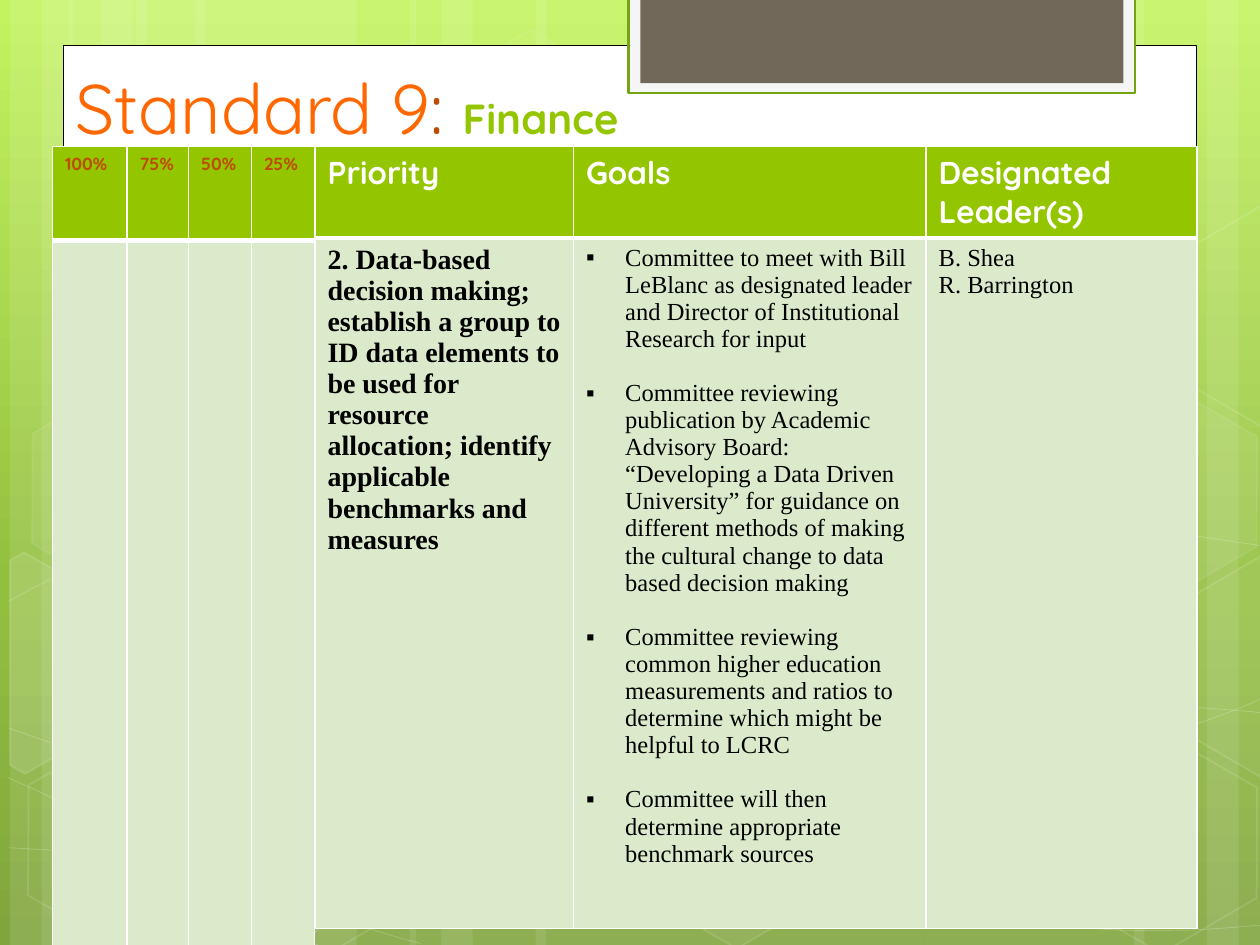
"""Build the Standard 9 finance slide with its priorities and progress tables."""
from copy import deepcopy
from math import cos, radians, sin
from typing import NamedTuple, Optional

from lxml import etree
from pptx import Presentation
from pptx.dml.color import RGBColor
from pptx.enum.shapes import MSO_SHAPE
from pptx.enum.text import MSO_ANCHOR, MSO_AUTO_SIZE, PP_ALIGN
from pptx.oxml.ns import qn
from pptx.util import Cm, Pt

RECT, HEXAGON = MSO_SHAPE.RECTANGLE, MSO_SHAPE.HEXAGON
BOTTOM, LEFT, NO_FIT = MSO_ANCHOR.BOTTOM, PP_ALIGN.LEFT, MSO_AUTO_SIZE.NONE
WHITE, BLACK, GREEN, PALE, RUST = "FFFFFF", "000000", "94C600", "DCEACC", "BF4D00"
SANS, SERIF = "Quicksand", "Times New Roman"
SLIDE_W, SLIDE_H, TILT = 25.4, 19.05, 30


class Paint(NamedTuple):
    fill: Optional[str] = None
    fill_alpha: int = 100
    line: Optional[str] = None
    width: float = 1
    line_alpha: int = 100


class Box(NamedTuple):
    x: float
    y: float
    w: float
    h: float
    paint: Paint


class Hexagon(NamedTuple):
    x: float
    y: float
    fill_alpha: int
    line_alpha: int


class CutHexagon(NamedTuple):
    center: tuple
    fill_alpha: int
    points: tuple


class Style(NamedTuple):
    font: str
    size: float
    color: str
    bold: bool = False


class Entry(NamedTuple):
    lines: tuple
    style: Style
    bullets: bool = False


class Grid(NamedTuple):
    x: float
    y: float
    cols: tuple
    rows: tuple
    cells: tuple


HEAD = Style(SANS, 18, WHITE, True)
SCORE = Style(SANS, 10, RUST, True)
PRIORITY = Style(SERIF, 16, BLACK, True)
BODY = Style(SERIF, 14, BLACK)
EMPTY = Entry((), BODY)

STRIPE = Paint(WHITE, 10)
STRIPE_SETS = ((0.2, 4.45), (1.4, 4.45), (8.26, 7.82))
RIGHT_STRIPES = ((18.62, 4.45), (24.33, 1.27), (22.86, 2.11))
CURVE = Paint(line=WHITE, width=0.5, line_alpha=20)
CURVES = (
    ((0.18, 17.09), (1.55, 17.17), (2.92, 17.25), (4.83, 17.22), (6.73, 17.2),
     (9.09, 17.15), (11.63, 16.89), (14.17, 16.64), (17.78, 16.15), (20.12, 15.67),
     (22.43, 15.19), (24.82, 14.43), (25.58, 14)),
    ((0.18, 12.12), (0.91, 11.71), (1.65, 11.33), (3.07, 10.95), (4.52, 10.57),
     (6.58, 10.01), (8.81, 9.83), (11.07, 9.65), (13.82, 9.63), (16.61, 9.83),
     (19.41, 10.03), (24.05, 10.82), (25.58, 11.02)),
    ((0.15, 15.67), (3.23, 17.07), (6.27, 18.47), (8.48, 19.02)),
    ((0.18, 14.68), (0.97, 14.96), (1.78, 15.24), (3.25, 15.65), (4.72, 16.03),
     (6.93, 16.66), (9.07, 17.09), (11.18, 17.53), (13.84, 17.98), (15.95, 18.24),
     (18.06, 18.52), (20.32, 18.62), (21.67, 18.69), (22.99, 18.8), (23.34, 18.75),
     (24, 18.75), (24.66, 18.72), (25.12, 18.67), (25.58, 18.64)),
    ((6.15, 19.02), (6.6, 18.52), (7.06, 18.01), (7.67, 17.55), (8.28, 17.09),
     (9.14, 16.59), (9.86, 16.23), (10.57, 15.88), (11, 15.72), (11.94, 15.47),
     (12.85, 15.21), (14.55, 14.86), (15.44, 14.68), (16.36, 14.5), (16.48, 14.5),
     (17.27, 14.45), (18.06, 14.38), (19.3, 14.3), (20.17, 14.27), (21.06, 14.25),
     (22.5, 14.27), (22.5, 14.27), (23, 14.27), (23.7, 14.27), (24.21, 14.27),
     (24.66, 14.3), (25.1, 14.33), (25.55, 14.38)),
)
HEXAGONS = (
    Hexagon(8.48, 0.91, 4, 8), Hexagon(12.62, 14.96, 6, 12), Hexagon(0.28, 15.01, 0, 12),
    Hexagon(0.36, 7.92, 7, 8), Hexagon(4.42, 15.04, 0, 12), Hexagon(19.13, 11.51, 10, 12),
    Hexagon(21.18, 15.06, 0, 12), Hexagon(21.18, 7.98, 7, 8),
)
CUT_HEXAGONS = (
    CutHexagon((0.91, 13.59), 10, ((0.2, 11.3), (0.48, 11.13), (2.44, 12.24),
                                   (2.41, 14.48), (0.51, 15.6), (0.2, 15.42))),
    CutHexagon((25.02, 13.21), 4, ((23.52, 12.32), (25.43, 11.2), (25.63, 11.33),
                                   (25.63, 15.57), (25.45, 15.67), (23.52, 14.55))),
    CutHexagon((25.02, 6.12), 0, ((23.52, 5.26), (25.43, 4.14), (25.65, 4.27),
                                  (25.63, 8.51), (25.45, 8.61), (23.52, 7.49))),
)
PANELS = (
    Box(1.27, 0.91, 22.86, 17.17, Paint(WHITE, line=BLACK, width=0.5)),
    Box(12.67, -0.05, 10.21, 1.93, Paint("F5F5F5", line="74A510", width=1.25)),
    Box(12.91, -0.05, 9.74, 1.73, Paint("71685A")),
)
TITLE = (
    ("Standard 9", Style(SANS, 40, "FF6700")),
    (": ", Style(SANS, 40, RUST)),
    ("Finance", Style(SANS, 24, GREEN, True)),
)
GOALS = (
    "Committee to meet with Bill LeBlanc as designated leader and Director of Institutional Research for input",
    "Committee reviewing publication by Academic Advisory Board: “Developing a Data Driven University” "
    "for guidance on different methods of making the cultural change to data based decision making",
    "Committee reviewing common higher education measurements and ratios to determine which might be helpful to LCRC",
    "Committee will then determine appropriate benchmark sources",
)
NEED = ("2. Data-based decision making; establish a group to ID data elements to be used for "
        "resource allocation; identify applicable benchmarks and measures")
GRIDS = (
    Grid(1.47, 2.95, (4.88, 5.21, 7.11, 5.46), (1.83, 13.92), (
        (EMPTY, *(Entry((t,), HEAD) for t in ("Priority", "Goals", "Designated Leader(s)"))),
        (EMPTY, Entry((NEED,), PRIORITY), Entry(GOALS, BODY, True),
         Entry(("B. Shea", "R. Barrington"), BODY)))),
    Grid(1.06, 2.95, (1.5, 1.24, 1.27, 1.27), (1.9, 15.04), (
        tuple(Entry((t,), SCORE) for t in ("100%", "75%", "50%", "25%")), (EMPTY,) * 4)),
)
ROW_LOOKS = ((GREEN, (1, 1, 1, 3)), (PALE, (1, 1, 3, 1)))


def rgb(color: str) -> RGBColor:
    """Turn a hex string into a colour."""
    return RGBColor.from_string(color)


def set_fill(fill, color: Optional[str], alpha: int = 100) -> None:
    """Apply a solid fill with an opacity in percent, or no fill."""
    if color is None or alpha == 0:
        fill.background()
        return
    fill.solid()
    fill.fore_color.rgb = rgb(color)
    if alpha < 100:
        clr = fill._xPr.find(".//" + qn("a:srgbClr"))
        etree.SubElement(clr, qn("a:alpha"), val=str(alpha * 1000))


def paint_shape(sp, paint: Paint) -> None:
    """Give a shape its fill and outline."""
    sp.shadow.inherit = False
    set_fill(sp.fill, paint.fill, paint.fill_alpha)
    set_fill(sp.line.fill, paint.line, paint.line_alpha)
    if paint.line:
        sp.line.width = Pt(paint.width)


def add_box(s, box: Box, kind=RECT):
    """Draw one preset shape."""
    sp = s.shapes.add_shape(kind, Cm(box.x), Cm(box.y), Cm(box.w), Cm(box.h))
    paint_shape(sp, box.paint)
    return sp


def add_outline(s, points, paint: Paint, close: bool):
    """Draw a freeform through points."""
    (x, y), *rest = [(Cm(px), Cm(py)) for px, py in points]
    fb = s.shapes.build_freeform(x, y)
    fb.add_line_segments(rest, close=close)
    sp = fb.convert_to_shape()
    paint_shape(sp, paint)
    return sp


def add_curve(s, nodes: tuple) -> None:
    """Draw a chain of cubic curves."""
    sp = add_outline(s, nodes, CURVE, False)
    lines = list(sp._element.iter(qn("a:lnTo")))
    for i in range(0, len(lines), 3):
        cubic = etree.Element(qn("a:cubicBezTo"))
        lines[i].addprevious(cubic)
        for line in lines[i:i + 3]:
            cubic.append(line[0])
            line.getparent().remove(line)


def add_cut_hexagon(s, cut: CutHexagon) -> None:
    """Draw a tilted hexagon trimmed at the slide edge."""
    cx, cy = cut.center
    c, d = cos(radians(TILT)), sin(radians(TILT))
    points = [(cx + c * (x - cx) + d * (y - cy), cy - d * (x - cx) + c * (y - cy)) for x, y in cut.points]
    add_outline(s, points, Paint(WHITE, cut.fill_alpha, WHITE, 1, 12), True).rotation = TILT


def set_font(font, style: Style) -> None:
    """Apply a text style."""
    font.name, font.size, font.bold = style.font, Pt(style.size), style.bold
    font.color.rgb = rgb(style.color)


def add_background(s) -> None:
    """Fill the slide with the green gradient and its pale decoration."""
    fill = s.background.fill
    fill.gradient()
    fill.gradient_angle = 270
    stops = s._element.find(".//" + qn("a:gsLst"))
    stops.insert(1, deepcopy(stops[0]))
    for stop, (pos, color) in zip(fill.gradient_stops, ((0, "C3F35F"), (0.62, "93BF3F"), (1, "81A53E"))):
        stop.position, stop.color.rgb = pos, rgb(color)
    stripes = [(x + dx, w) for x, wide in STRIPE_SETS for dx, w in ((2.54, wide), (0, 1.27), (0.64, 2.11))]
    for x, w in (*stripes, *RIGHT_STRIPES):
        add_box(s, Box(x, 0, w, SLIDE_H, STRIPE))
    for nodes in CURVES:
        add_curve(s, nodes)
    for h in HEXAGONS:
        sp = add_box(s, Box(h.x, h.y, 4.45, 3.86, Paint(WHITE, h.fill_alpha, WHITE, 1, h.line_alpha)), HEXAGON)
        sp.adjustments[0], sp.rotation = 0.285, TILT
    for cut in CUT_HEXAGONS:
        add_cut_hexagon(s, cut)


def add_title(s) -> None:
    """Place the title above the panels."""
    sp = s.shapes.title
    s.shapes._spTree.append(sp._element)
    sp.left, sp.top, sp.width, sp.height = Cm(1.27), Cm(-0.05), Cm(22.86), Cm(3.18)
    tf = sp.text_frame
    tf.auto_size, tf.vertical_anchor, tf.word_wrap = NO_FIT, BOTTOM, True
    p = tf.paragraphs[0]
    p.alignment = LEFT
    for text, style in TITLE:
        r = p.add_run()
        r.text = text
        set_font(r.font, style)


def add_bullet(p) -> None:
    """Give a paragraph a square bullet and a hanging indent."""
    p.space_after = Pt(15.5)
    pPr = p._p.get_or_add_pPr()
    pPr.set("marL", str(Cm(0.79)))
    pPr.set("indent", str(-Cm(0.79)))
    bullet = etree.Element(qn("a:buChar"), char="▪")
    pPr.find(qn("a:spcAft")).addnext(bullet)
    bullet.addprevious(etree.Element(qn("a:buFont"), typeface=SERIF))


def fill_cell(cell, entry: Entry, color: str, borders: tuple) -> None:
    """Write one table cell with left, right, top and bottom borders."""
    set_fill(cell.fill, color)
    tcPr = cell._tc.get_or_add_tcPr()
    for i, (side, width) in enumerate(zip("LRTB", borders)):
        ln = etree.Element(qn(f"a:ln{side}"), w=str(Pt(width)))
        etree.SubElement(etree.SubElement(ln, qn("a:solidFill")), qn("a:srgbClr"), val=WHITE)
        tcPr.insert(i, ln)
    tf = cell.text_frame
    for i, line in enumerate(entry.lines):
        p = tf.add_paragraph() if i else tf.paragraphs[0]
        p.text = line
        set_font(p.font, entry.style)
        if entry.bullets:
            add_bullet(p)


def add_grid(s, grid: Grid) -> None:
    """Draw a table with a green header row."""
    frame = s.shapes.add_table(len(grid.rows), len(grid.cols), Cm(grid.x), Cm(grid.y),
                               Cm(sum(grid.cols)), Cm(sum(grid.rows)))
    table = frame.table
    table.horz_banding = False
    for col, w in zip(table.columns, grid.cols):
        col.width = Cm(w)
    for row, h, entries, look in zip(table.rows, grid.rows, grid.cells, ROW_LOOKS):
        row.height = Cm(h)
        for cell, entry in zip(row.cells, entries):
            fill_cell(cell, entry, *look)


def main() -> None:
    """Assemble and save the slide."""
    prs = Presentation()
    prs.slide_width, prs.slide_height = Cm(SLIDE_W), Cm(SLIDE_H)
    s = prs.slides.add_slide(prs.slide_layouts[5])
    add_background(s)
    for box in PANELS:
        add_box(s, box)
    add_title(s)
    for grid in GRIDS:
        add_grid(s, grid)
    prs.save("out.pptx")


if __name__ == "__main__":
    main()
